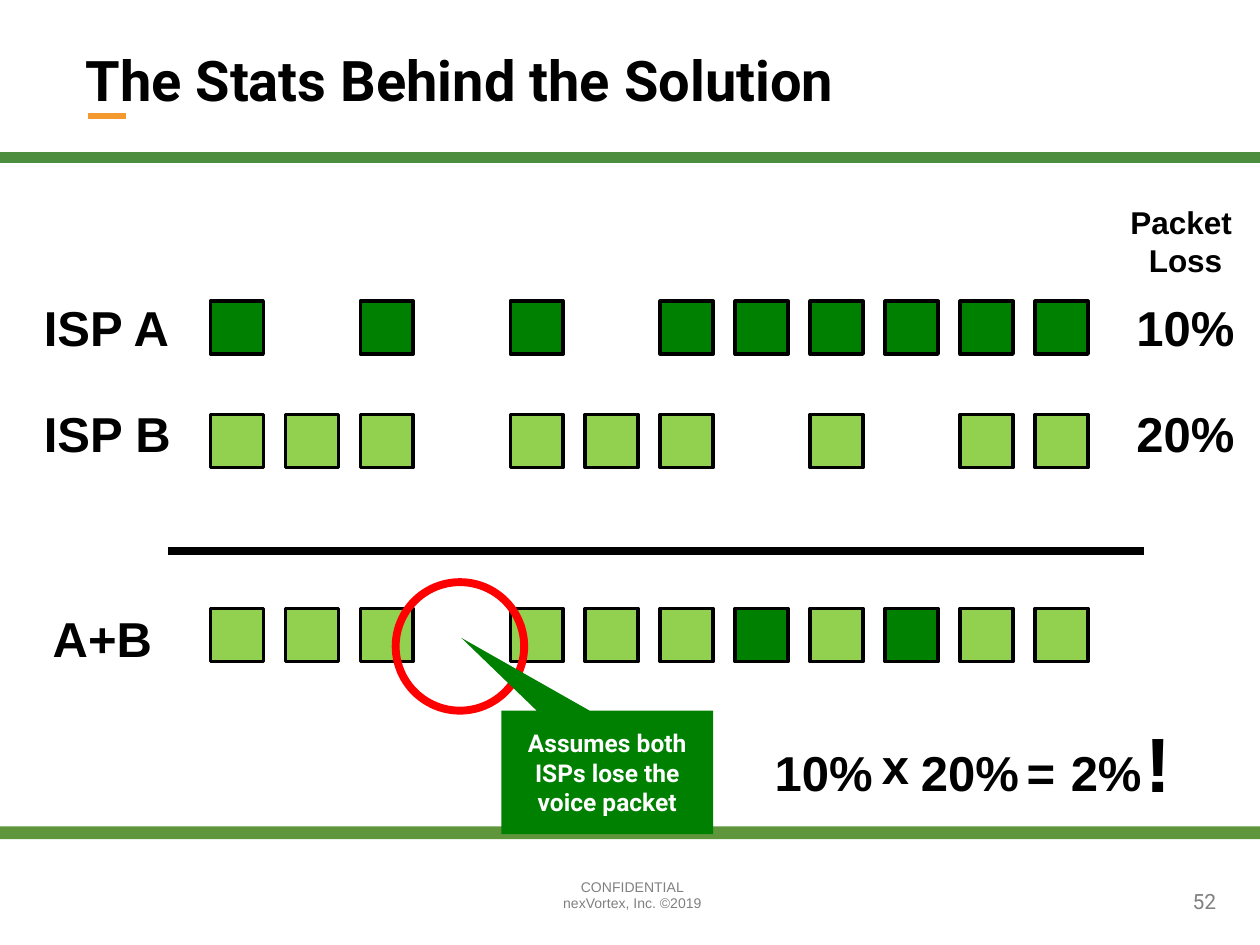
from lxml import etree
from pptx import Presentation
from pptx.dml.color import RGBColor
from pptx.enum.shapes import MSO_CONNECTOR, MSO_SHAPE
from pptx.enum.text import MSO_ANCHOR, MSO_AUTO_SIZE, PP_ALIGN
from pptx.oxml.ns import qn
from pptx.util import Inches, Pt

RECTANGLE, OVAL = MSO_SHAPE.RECTANGLE, MSO_SHAPE.OVAL
CALLOUT = MSO_SHAPE.RECTANGULAR_CALLOUT
STRAIGHT = MSO_CONNECTOR.STRAIGHT
LEFT, CENTER, RIGHT = PP_ALIGN.LEFT, PP_ALIGN.CENTER, PP_ALIGN.RIGHT
TOP, MIDDLE = MSO_ANCHOR.TOP, MSO_ANCHOR.MIDDLE

BLACK, WHITE, GREY = "000000", "FFFFFF", "808080"
DARK_GREEN, LIGHT_GREEN, RED = "008000", "92D050", "FF0000"

PACKET_LEFT, PACKET_PITCH, PACKET_SIZE = 1.67, 0.595, 0.42
PACKETS_A = "A.A.A.AAAAAA"
PACKETS_B = "BBB.BBB.B.BB"
PACKET_COLORS = {"A": DARK_GREEN, "B": LIGHT_GREEN}


def rgb(hex_color):
    return RGBColor.from_string(hex_color)


def write(box, text, *, size=28, font="Arial", color=BLACK, bold=True,
          align=LEFT, anchor=TOP, wrap=False):
    """Fill a shape's text frame, one paragraph for each line of text."""
    frame = box.text_frame
    frame.word_wrap = wrap
    frame.vertical_anchor = anchor
    if not wrap:
        frame.auto_size = MSO_AUTO_SIZE.SHAPE_TO_FIT_TEXT
    for index, line in enumerate(text.split("\n")):
        para = frame.add_paragraph() if index else frame.paragraphs[0]
        para.alignment = align
        span = para.add_run()
        span.text = line
        span.font.name = font
        span.font.size = Pt(size)
        span.font.bold = bold
        span.font.color.rgb = rgb(color)


class SlideBuilder:
    def __init__(self, page):
        self.page = page

    def text(self, text, left, top, width, height, group=None, **style):
        shapes = (group or self.page).shapes
        box = shapes.add_textbox(Inches(left), Inches(top), Inches(width), Inches(height))
        write(box, text, **style)

    def shape(self, kind, left, top, width, height, fill=None, line=None, weight=2):
        shape = self.page.shapes.add_shape(
            kind, Inches(left), Inches(top), Inches(width), Inches(height))
        shape.shadow.inherit = False
        if fill:
            shape.fill.solid()
            shape.fill.fore_color.rgb = rgb(fill)
        else:
            shape.fill.background()
        if line:
            shape.line.color.rgb = rgb(line)
            shape.line.width = Pt(weight)
        else:
            shape.line.fill.background()
        return shape

    def rule(self, left, right, y, color, weight):
        rule = self.page.shapes.add_connector(
            STRAIGHT, Inches(left), Inches(y), Inches(right), Inches(y))
        rule.line.color.rgb = rgb(color)
        rule.line.width = Pt(weight)
        etree.SubElement(rule._element.spPr, qn("a:effectLst"))

    def packets(self, pattern, top):
        """Draw a row of packets; a dot in the pattern is a lost packet."""
        for column, source in enumerate(pattern):
            if source != ".":
                self.shape(RECTANGLE, PACKET_LEFT + column * PACKET_PITCH, top,
                           PACKET_SIZE, PACKET_SIZE, PACKET_COLORS[source], BLACK)


def main():
    deck = Presentation()
    deck.slide_width, deck.slide_height = Inches(10), Inches(7.5)
    page = deck.slides.add_slide(deck.slide_layouts[6])
    builder = SlideBuilder(page)

    # Header and footer
    builder.rule(0.7, 1, 0.92, "F3992E", 3)
    builder.shape(RECTANGLE, 0, 6.56, 10, 0.1, "5F963C")
    builder.rule(0, 10, 1.25, "4D8D40", 6)
    builder.text("CONFIDENTIAL\nnexVortex, Inc. ©2019", 4.3, 6.92, 1.44, 0.37,
                 size=8, color=GREY, bold=False, align=CENTER, wrap=True)
    builder.text("The Stats Behind the Solution", 0.58, 0, 9, 1.25,
                 size=32, font="Roboto", anchor=MIDDLE, wrap=True)
    builder.text("52", 9.33, 6.95, 0.42, 0.4, size=12, font="Roboto", color=GREY,
                 bold=False, align=RIGHT, anchor=MIDDLE, wrap=True)

    # Packet rows: the combined stream prefers B and falls back on A
    combined = "".join(a if b == "." else b for a, b in zip(PACKETS_A, PACKETS_B))
    builder.packets(PACKETS_A, 2.39)
    builder.packets(PACKETS_B, 3.29)
    builder.rule(1.33, 9.08, 4.37, BLACK, 4.5)
    builder.packets(combined, 4.83)

    builder.text("ISP A", 0.25, 2.31, 1.2, 0.57)
    builder.text("ISP B", 0.25, 3.15, 1.22, 0.57)
    builder.text("A+B", 0.32, 4.78, 1, 0.57)
    builder.text("Packet \nLoss", 8.83, 1.56, 1.16, 0.71, size=18, align=CENTER)
    builder.text("10%", 8.92, 2.31, 0.99, 0.57)
    builder.text("20%", 8.92, 3.15, 0.99, 0.57)

    # Packet lost on both lines
    builder.shape(OVAL, 3.14, 4.62, 1.02, 1.02, line=RED, weight=4.5)
    callout = builder.shape(CALLOUT, 3.98, 5.64, 1.68, 0.98, DARK_GREEN)
    callout.adjustments[0], callout.adjustments[1] = -0.69, -1.09
    write(callout, "Assumes both ISPs lose the voice packet", size=14, font="Roboto",
          color=WHITE, align=CENTER, anchor=MIDDLE, wrap=True)

    # Combined loss
    equation = page.shapes.add_group_shape()
    for term, left, top, width in (
        ("10%", 6.05, 5.84, 1.19),
        ("x", 6.9, 5.79, 0.51),
        ("20%", 7.21, 5.84, 1.19),
        ("=", 8.05, 5.84, 0.52),
        ("2%", 8.4, 5.84, 0.93),
    ):
        builder.text(term, left, top, width, 0.57, group=equation)
    builder.text("!", 8.99, 5.63, 0.49, 0.84, group=equation, size=44)

    deck.save("out.pptx")


if __name__ == "__main__":
    main()
